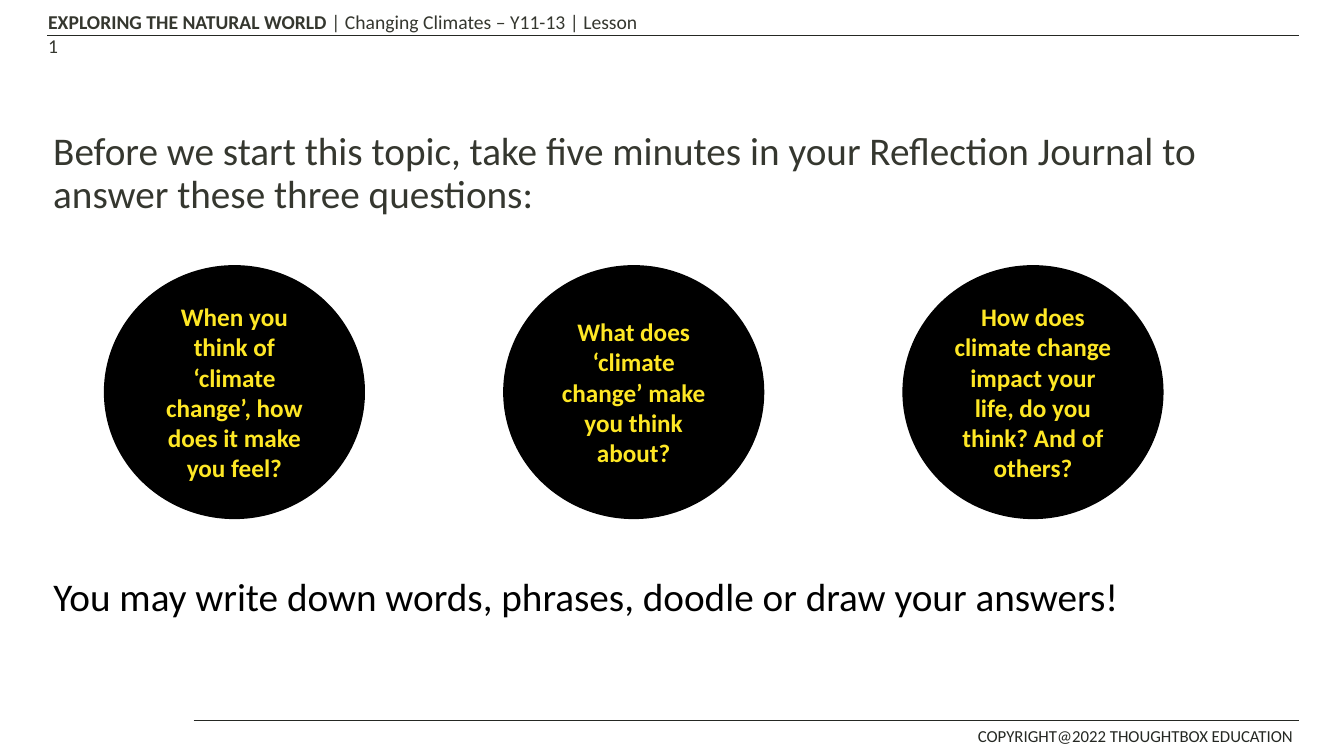
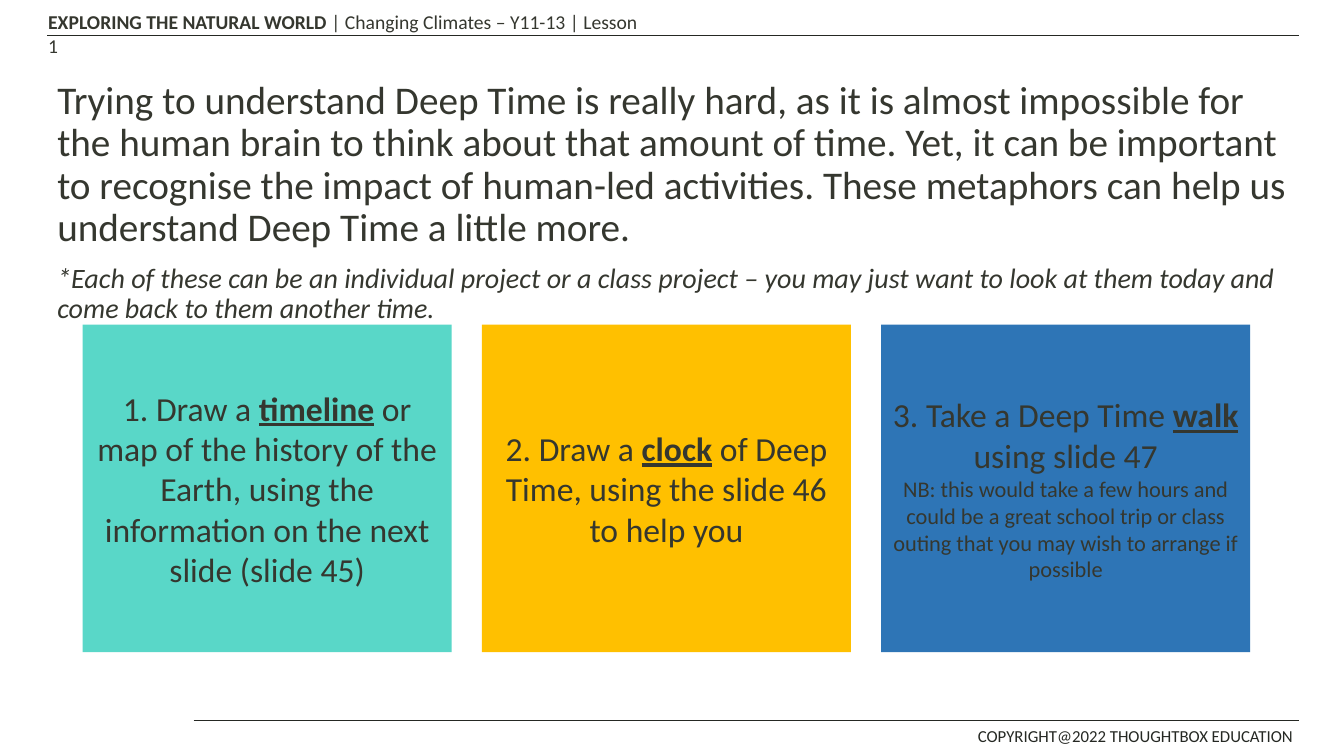
from lxml import etree
from pptx import Presentation
from pptx.dml.color import RGBColor
from pptx.enum.shapes import MSO_CONNECTOR, MSO_SHAPE
from pptx.enum.text import MSO_ANCHOR, PP_ALIGN
from pptx.oxml.ns import qn
from pptx.util import Inches, Pt

STRAIGHT = MSO_CONNECTOR.STRAIGHT
CIRCLE = MSO_SHAPE.FLOWCHART_CONNECTOR
RECTANGLE = MSO_SHAPE.RECTANGLE
TOP, MIDDLE = MSO_ANCHOR.TOP, MSO_ANCHOR.MIDDLE
LEFT, CENTER = PP_ALIGN.LEFT, PP_ALIGN.CENTER

SLIDE_WIDTH, SLIDE_HEIGHT = 13.33, 7.5
COLUMN_PITCH = 3.96
RULE_RIGHT = 12.88
HEADER_RULE, FOOTER_RULE = 0.35, 7.15
FONT = "Calibri"
INK, RULE, BLACK, YELLOW = "35372F", "252823", "000000", "FEE725"
TEAL, AMBER, BLUE = "59D7C8", "FFC000", "2E75B6"

QUESTIONS = [
    "When you think of ‘climate change’, how does it make you feel?",
    "What does ‘climate change’ make you think about?",
    "How does climate change impact your life, do you think? And of others?",
]
PROJECTS = [
    (TEAL, "1. Draw a ", "timeline",
     " or map of the history of the Earth, using the information on the next slide (slide 45)", None),
    (AMBER, "2. Draw a ", "clock", " of Deep Time, using the slide 46 to help you", None),
    (BLUE, "3. Take a Deep Time ", "walk", " using slide 47",
     "NB: this would take a few hours and could be a great school trip or class outing "
     "that you may wish to arrange if possible"),
]


def color(value):
    return RGBColor.from_string(value)


def run(text, size, fill=INK, bold=False, italic=False, underline=False):
    return text, size, fill, bold, italic, underline


def write(shape, paragraphs, anchor=TOP, align=LEFT, line_spacing=1.0, gap=0):
    frame = shape.text_frame
    frame.word_wrap = True
    frame.vertical_anchor = anchor
    for index, runs in enumerate(paragraphs):
        paragraph = frame.add_paragraph() if index else frame.paragraphs[0]
        paragraph.alignment = align
        paragraph.line_spacing = line_spacing
        paragraph.space_before = Pt(gap if index else 0)
        for text, size, fill, bold, italic, underline in runs:
            piece = paragraph.add_run()
            piece.text = text
            font = piece.font
            font.name, font.size = FONT, Pt(size)
            font.bold, font.italic, font.underline = bold, italic, underline
            font.color.rgb = color(fill)


def add_text(slide, box, paragraphs, **layout):
    shape = slide.shapes.add_textbox(*map(Inches, box))
    write(shape, paragraphs, **layout)


def add_panel(slide, kind, box, fill, paragraphs):
    shape = slide.shapes.add_shape(kind, *map(Inches, box))
    shape.shadow.inherit = False
    shape.fill.solid()
    shape.fill.fore_color.rgb = color(fill)
    shape.line.fill.background()
    write(shape, paragraphs, anchor=MIDDLE, align=CENTER)


def add_rule(slide, left, top):
    line = slide.shapes.add_connector(
        STRAIGHT, Inches(left), Inches(top), Inches(RULE_RIGHT), Inches(top))
    line.line.color.rgb = color(RULE)
    line.line.width = Pt(1)
    etree.SubElement(line._element.spPr, qn("a:effectLst"))


def column_box(first_left, column, top, width, height):
    return first_left + column * COLUMN_PITCH, top, width, height


def add_lesson_slide(presentation):
    slide = presentation.slides.add_slide(presentation.slide_layouts[6])
    add_rule(slide, 0.47, HEADER_RULE)
    add_rule(slide, 1.92, FOOTER_RULE)
    add_text(slide, (9.6, FOOTER_RULE, 3.4, 0.31),
             [[run("COPYRIGHT@2022 THOUGHTBOX EDUCATION", 12, RULE)]])
    add_text(slide, (0.38, 0.05, 6.07, 0.34),
             [[run("EXPLORING THE NATURAL WORLD ", 14, bold=True),
               run("| Changing Climates – Y11-13 | Lesson 1", 14)]])
    return slide


def build_questions(presentation):
    slide = add_lesson_slide(presentation)
    add_text(slide, (0.43, 1.08, 12.46, 1.3),
             [[run("Before we start this topic, take five minutes in your Reflection Journal "
                   "to answer these three questions:", 28)]],
             anchor=MIDDLE, line_spacing=0.9)
    for column, question in enumerate(QUESTIONS):
        add_panel(slide, CIRCLE, column_box(1.03, column, 2.63, 2.59, 2.52), BLACK,
                  [[run(question, 18, YELLOW, bold=True)]])
    add_text(slide, (0.43, 5.63, 12.42, 0.57),
             [[run("You may write down words, phrases, doodle or draw your answers!", 28, BLACK)]])


def build_projects(presentation):
    slide = add_lesson_slide(presentation)
    add_text(slide, (0.47, 0.75, 12.4, 2.47),
             [[run("Trying to understand Deep Time is really hard, as it is almost impossible for "
                   "the human brain to think about that amount of time. Yet, it can be important "
                   "to recognise the impact of human-led activities. These metaphors can help us "
                   "understand Deep Time a little more.", 28)],
              [run("*Each of these can be an individual project or a class project – you may just "
                   "want to look at them today and come back to them another time.",
                   20, italic=True)]],
             line_spacing=0.9, gap=10)
    for column, (fill, opening, keyword, ending, note) in enumerate(PROJECTS):
        paragraphs = [[run(opening, 24), run(keyword, 24, bold=True, underline=True),
                       run(ending, 24)]]
        if note:
            paragraphs.append([run(note, 16)])
        add_panel(slide, RECTANGLE, column_box(0.82, column, 3.22, 3.66, 3.25), fill, paragraphs)


def main():
    presentation = Presentation()
    presentation.slide_width = Inches(SLIDE_WIDTH)
    presentation.slide_height = Inches(SLIDE_HEIGHT)
    build_questions(presentation)
    build_projects(presentation)
    presentation.save("out.pptx")


if __name__ == "__main__":
    main()
